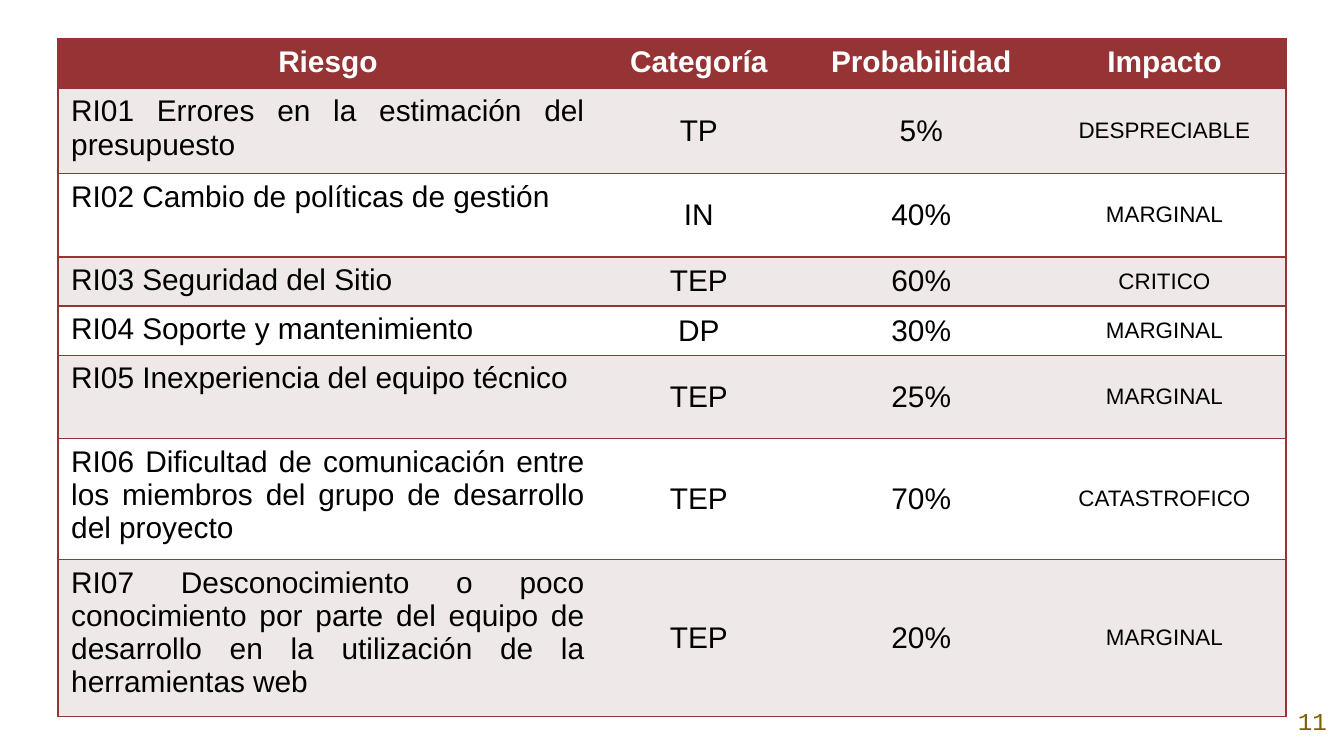
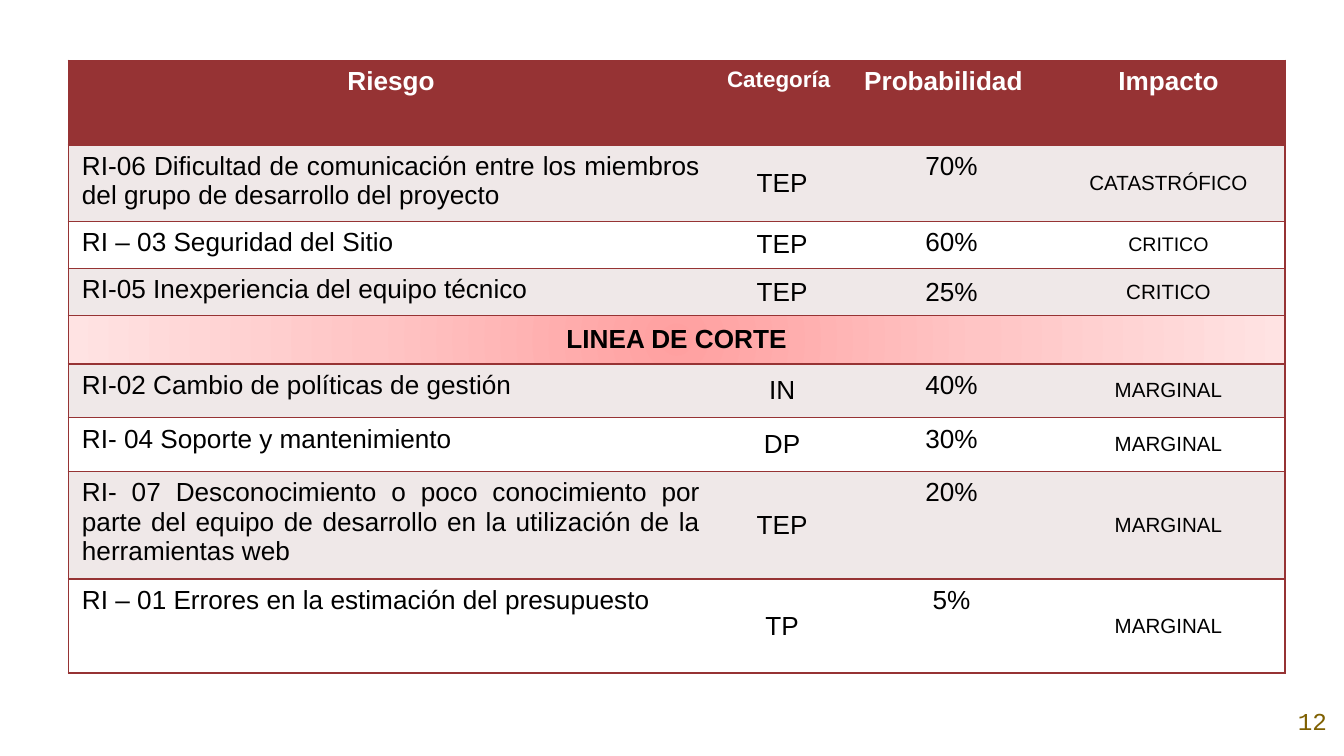
"""Build two slides of project risk tables."""
from lxml import etree
from pptx import Presentation
from pptx.dml.color import RGBColor as Rgb
from pptx.enum.text import MSO_ANCHOR as Anchor, PP_ALIGN as Align
from pptx.oxml import parse_xml
from pptx.oxml.ns import qn
from pptx.util import Inches, Pt

HUES = {"wine": "963334", "band": "EFE8E8", "white": "FFFFFF",
        "ink": "000000", "gold": "7F6000"}
GLOW = [(0, "FFA0A0"), (50, "FFC5C5"), (100, "FFE3E3")]
PLAIN = "{2D5ABB26-0587-4C30-8999-92F81FD0307C}"
SPACE = "http://schemas.openxmlformats.org/drawingml/2006/main"
HEAD = ("Riesgo", "Categoría", "Probabilidad", "Impacto")

RISKS = [
    ("RI01 Errores en la estimación del presupuesto", "TP", "5%", "DESPRECIABLE"),
    ("RI02 Cambio de políticas de gestión", "IN", "40%", "MARGINAL"),
    ("RI03 Seguridad del Sitio", "TEP", "60%", "CRITICO"),
    ("RI04 Soporte y mantenimiento", "DP", "30%", "MARGINAL"),
    ("RI05 Inexperiencia del equipo técnico ", "TEP", "25%", "MARGINAL"),
    ("RI06 Dificultad de comunicación entre los miembros del grupo de "
     "desarrollo del proyecto", "TEP", "70%", "CATASTROFICO"),
    ("RI07 Desconocimiento o poco conocimiento por parte del equipo de "
     "desarrollo en la utilización de la herramientas web",
     "TEP", "20%", "MARGINAL"),
]
RANKS = [
    ("RI-06 Dificultad de comunicación entre los miembros del grupo de "
     "desarrollo del proyecto", "TEP", "70%", "CATASTRÓFICO"),
    ("RI – 03 Seguridad del Sitio", "TEP", "60%", "CRITICO"),
    ("RI-05 Inexperiencia del equipo técnico ", "TEP", "25%", "CRITICO"),
    ("LINEA DE CORTE",),
    ("RI-02 Cambio de políticas de gestión", "IN", "40%", "MARGINAL"),
    ("RI- 04 Soporte y mantenimiento", "DP", "30%", "MARGINAL"),
    ("RI- 07 Desconocimiento o poco conocimiento por parte del equipo de "
     "desarrollo en la utilización de la herramientas web",
     "TEP", "20%", "MARGINAL"),
    ("RI – 01 Errores en la estimación del presupuesto", "TP", "5%", "MARGINAL"),
]
TOP, MID = Anchor.TOP, Anchor.MIDDLE
SLIDES = [
    {"page": "11", "at": (0.43, 0.29, 9.14, 5.04), "rows": RISKS,
     "size": 16, "small": 12, "cols": (4.02, 1.5, 1.81, 1.81),
     "tall": (0.36, 0.62, 0.62, 0.36, 0.36, 0.62, 0.88, 1.15),
     "anchors": (TOP, MID, MID, MID), "odd": {}},
    {"page": "12", "at": (0.51, 0.45, 9.06, 4.57), "rows": RANKS,
     "size": 14, "small": 11, "cols": (4.8, 1.02, 1.5, 1.73),
     "tall": (0.63, 0.56, 0.35, 0.35, 0.36, 0.4, 0.4, 0.79, 0.7),
     "anchors": (TOP, MID, TOP, MID),
     "odd": {(0, 1): {"size": 12, "align": Align.JUSTIFY},
             (0, 2): {"align": Align.JUSTIFY},
             (2, 3): {"size": 10.5}, (3, 2): {"anchor": MID}}},
]


def write(box, text, size=16, hue="ink", face="Arial", bold=False,
          align=Align.CENTER, anchor=MID):
    """Put formatted text in a cell or a text box."""
    frame = box.text_frame
    frame.word_wrap = True
    para = frame.paragraphs[0]
    para.alignment = align
    run = para.add_run()
    run.text = text
    font = run.font
    font.size, font.name, font.bold = Pt(size), face, bold
    font.color.rgb = Rgb.from_string(HUES[hue])
    holder = box if hasattr(box, "is_merge_origin") else frame
    holder.vertical_anchor = anchor


def rule(cell, sides):
    """Draw lines on the given sides of a cell."""
    props = cell._tc.get_or_add_tcPr()
    for spot, side in enumerate(sides):
        line = etree.Element(qn("a:ln" + side), w=str(Pt(1)))
        fill = etree.SubElement(line, qn("a:solidFill"))
        etree.SubElement(fill, qn("a:srgbClr"), val=HUES["wine"])
        props.insert(spot, line)


def glow(cell):
    """Fill a cell with the round gradient."""
    stops = "".join(f'<a:gs pos="{pos * 1000}"><a:srgbClr val="{hue}"/></a:gs>'
                    for pos, hue in GLOW)
    cell._tc.get_or_add_tcPr().append(parse_xml(
        f'<a:gradFill xmlns:a="{SPACE}"><a:gsLst>{stops}</a:gsLst>'
        '<a:path path="circle"><a:fillToRect l="50000" t="50000" '
        'r="50000" b="50000"/></a:path></a:gradFill>'))


def style(row, col, plan):
    """Return the text format of a cell."""
    look = {"size": plan["small"] if row and col == 3 else plan["size"],
            "anchor": plan["anchors"][col]}
    if row == 0:
        look.update(hue="white", bold=True, anchor=TOP)
    elif col == 0:
        look["align"] = Align.JUSTIFY
    return look | plan["odd"].get((row, col), {})


def grid(slide, plan):
    """Add the risk table."""
    rows, cols = [HEAD] + plan["rows"], plan["cols"]
    shape = slide.shapes.add_table(
        len(rows), len(cols), *[Inches(n) for n in plan["at"]])
    table = shape.table
    shape.element.xpath(".//a:tableStyleId")[0].text = PLAIN
    for col, wide in zip(table.columns, cols):
        col.width = Inches(wide)
    for row, high in zip(table.rows, plan["tall"]):
        row.height = Inches(high)
    last = len(cols) - 1
    for r, row in enumerate(rows):
        cut = len(row) == 1
        if cut:
            table.cell(r, 0).merge(table.cell(r, last))
            write(table.cell(r, 0), row[0], size=plan["size"], bold=True)
        for c in range(len(cols)):
            cell = table.cell(r, c)
            if cut:
                glow(cell)
            else:
                hue = "wine" if r == 0 else "band" if r % 2 else "white"
                cell.fill.solid()
                cell.fill.fore_color.rgb = Rgb.from_string(HUES[hue])
                write(cell, row[c], **style(r, c, plan))
            left, right = c == 0, c == last or cut and c == 0
            rule(cell, ["L"] * left + ["R"] * right + ["T", "B"])


def number(slide, text):
    """Add the page number."""
    box = slide.shapes.add_textbox(
        Inches(9.53), Inches(5.11), Inches(0.47), Inches(0.51))
    frame = box.text_frame
    frame.margin_left = frame.margin_right = Inches(0.1)
    frame.margin_top = frame.margin_bottom = Inches(0.1)
    write(box, text, size=13, hue="gold", face="Courier New")


def main():
    """Build and save the deck."""
    deck = Presentation()
    deck.slide_width = Inches(10)
    deck.slide_height = Inches(10) * 9 // 16
    for plan in SLIDES:
        slide = deck.slides.add_slide(deck.slide_layouts[6])
        number(slide, plan["page"])
        grid(slide, plan)
    deck.save("out.pptx")


if __name__ == "__main__":
    main()
